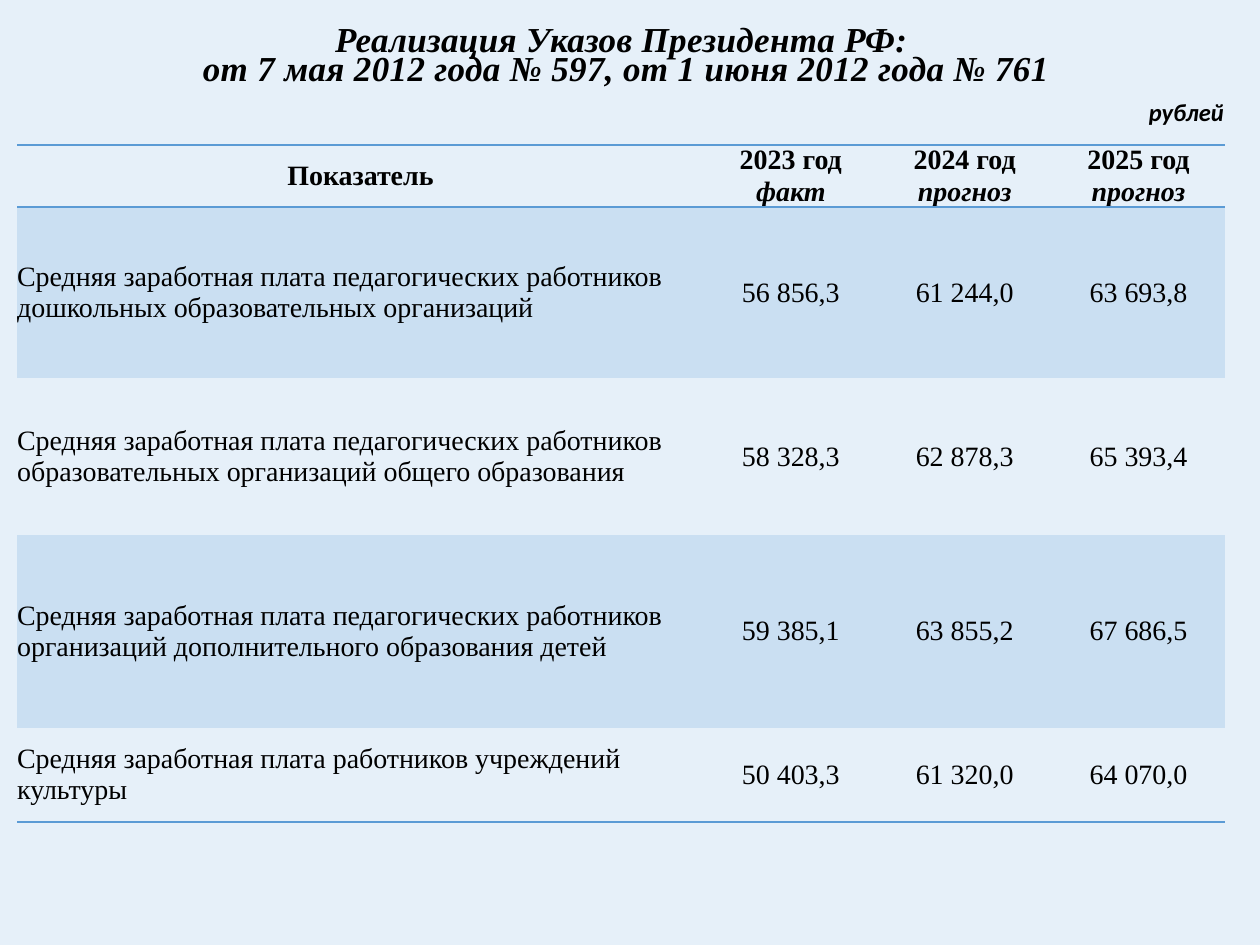
from lxml import etree
from pptx import Presentation
from pptx.dml.color import RGBColor
from pptx.enum.text import MSO_ANCHOR, MSO_AUTO_SIZE, PP_ALIGN
from pptx.oxml.ns import qn
from pptx.util import Pt

LEFT, CENTER = PP_ALIGN.LEFT, PP_ALIGN.CENTER
MIDDLE = MSO_ANCHOR.MIDDLE
NO_FIT, GROW = MSO_AUTO_SIZE.NONE, MSO_AUTO_SIZE.SHAPE_TO_FIT_TEXT
TITLE_ONLY = 5
NO_STYLE = "{2D5ABB26-0587-4C30-8999-92F81FD0307C}"

BACKGROUND, BAND, RULE, INK = "E6F0F9", "CADFF2", "5B9BD5", "000000"
SERIF, SANS = "Times New Roman", "Calibri"

TITLE = "Реализация Указов Президента РФ: \vот 7 мая 2012 года № 597, от 1 июня 2012 года № 761"
HEADER = ["Показатель", "2023 год\nфакт", "2024 год\nпрогноз", "2025 год\nпрогноз"]
SALARIES = [
    ["Средняя заработная плата педагогических работников дошкольных образовательных организаций",
     "56 856,3", "61 244,0", "63 693,8"],
    ["Средняя заработная плата педагогических работников образовательных организаций общего образования",
     "58 328,3", "62 878,3", "65 393,4"],
    ["Средняя заработная плата педагогических работников организаций дополнительного образования детей",
     "59 385,1", "63 855,2", "67 686,5"],
    ["Средняя заработная плата работников учреждений культуры",
     "50 403,3", "61 320,0", "64 070,0"],
]
COL_WIDTHS = [392.4, 99.36, 99.36, 99.36]
ROW_HEIGHTS = [34.6, 97.9, 89.3, 110.2, 54]


def color(value):
    return RGBColor.from_string(value)


class SlideBuilder:
    def __init__(self, slide):
        self.s = slide
        fill = slide.background.fill
        fill.solid()
        fill.fore_color.rgb = color(BACKGROUND)

    def style(self, p, name, size, **formats):
        for r in p.runs:
            for key, value in {"name": name, "size": Pt(size), **formats}.items():
                setattr(r.font, key, value)
            r.font.color.rgb = color(INK)

    def title(self, text, left, top, width, height):
        sp = self.s.shapes.title
        box = {"left": left, "top": top, "width": width, "height": height}
        for key, value in box.items():
            setattr(sp, key, Pt(value))
        tf = sp.text_frame
        tf.auto_size, tf.vertical_anchor = NO_FIT, MIDDLE
        p = tf.paragraphs[0]
        p.text = text
        formats = {"alignment": CENTER, "line_spacing": Pt(16.6), "space_before": Pt(0.9)}
        for key, value in formats.items():
            setattr(p, key, value)
        self.style(p, SERIF, 20, bold=True, italic=True)
        for r in p.runs:
            r.font._element.set("spc", "20")

    def label(self, text, left, top, width, height):
        sp = self.s.shapes.add_textbox(Pt(left), Pt(top), Pt(width), Pt(height))
        tf = sp.text_frame
        tf.auto_size = GROW
        tf.word_wrap = True
        p = tf.paragraphs[0]
        p.text = text
        self.style(p, SANS, 14, bold=True, italic=True)

    def border(self, cell, side):
        ln = etree.SubElement(cell._tc.get_or_add_tcPr(), qn(f"a:{side}"), w=str(Pt(1)))
        fill = etree.SubElement(ln, qn("a:solidFill"))
        etree.SubElement(fill, qn("a:srgbClr"), val=RULE)

    def cell(self, cell, text, align, header, band, sides):
        for side in sides:
            self.border(cell, side)
        for edge in ("left", "top", "right", "bottom"):
            setattr(cell, f"margin_{edge}", 0)
        cell.vertical_anchor = MIDDLE
        if band:
            cell.fill.solid()
            cell.fill.fore_color.rgb = color(BAND)
        else:
            cell.fill.background()
        cell.text_frame.text = text
        for i, p in enumerate(cell.text_frame.paragraphs):
            p.alignment = align
            self.style(p, SERIF, 16, bold=header, italic=i > 0)

    def table(self, rows, left, top):
        frame = self.s.shapes.add_table(
            len(rows), len(COL_WIDTHS), Pt(left), Pt(top), Pt(sum(COL_WIDTHS)), Pt(sum(ROW_HEIGHTS)))
        table = frame.table
        table._tbl.tblPr.find(qn("a:tableStyleId")).text = NO_STYLE
        for column, width in zip(table.columns, COL_WIDTHS):
            column.width = Pt(width)
        borders = {0: ["lnT", "lnB"], len(rows) - 1: ["lnB"]}
        for i, (row, height) in enumerate(zip(rows, ROW_HEIGHTS)):
            table.rows[i].height = Pt(height)
            for j, text in enumerate(row):
                align = LEFT if i and j == 0 else CENTER
                self.cell(table.cell(i, j), text, align, i == 0, i % 2 == 1, borders.get(i, []))


def main():
    prs = Presentation()
    prs.slide_width, prs.slide_height = Pt(720), Pt(540)
    builder = SlideBuilder(prs.slides.add_slide(prs.slide_layouts[TITLE_ONLY]))
    builder.title(TITLE, -2.2, 3.6, 720, 60.5)
    builder.table([HEADER, *SALARIES], 9.8, 82.8)
    builder.label("рублей", 649.4, 51.8, 62.6, 24.5)
    prs.save("out.pptx")


if __name__ == "__main__":
    main()
